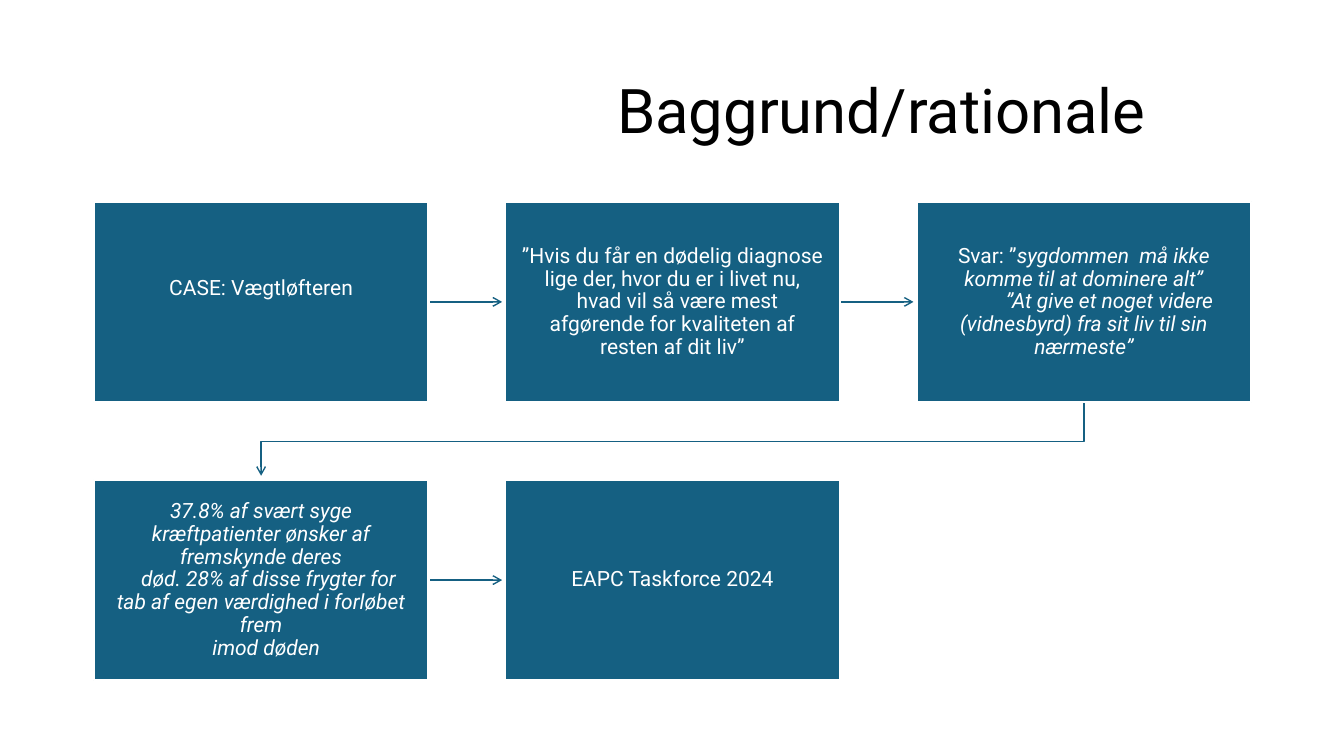
from lxml import etree
from pptx import Presentation
from pptx.dml.color import RGBColor
from pptx.enum import shapes, text
from pptx.oxml import ns
from pptx.util import Inches, Pt

BLUE = RGBColor(0x15, 0x60, 0x82)
WHITE = RGBColor(0xFF, 0xFF, 0xFF)
BLACK = RGBColor(0x00, 0x00, 0x00)
FONT = "Roboto"

LEFT, TOP = 0.93, 2.0
BOX_WIDTH, BOX_HEIGHT = 3.32, 1.99
COLUMN_STEP, ROW_STEP = 4.08, 2.76
ARROW_LENGTH = 0.73

CASE = [(0, [("CASE: Vægtløfteren", False)])]
QUESTION = [
    (0, [("”Hvis du får en dødelig diagnose lige der, hvor du er i livet nu,", False)]),
    (0.1, [("hvad vil så være mest afgørende for kvaliteten af resten af dit liv”", False)]),
]
ANSWER = [
    (0, [("Svar: ”", False), ("sygdommen  må ikke komme til at dominere alt”", True)]),
    (0.51, [("”At give et noget videre (vidnesbyrd) fra sit liv til sin nærmeste”", True)]),
]
STATISTICS = [
    (0, [("37.8% af svært syge kræftpatienter ønsker af fremskynde deres", True)]),
    (0.15, [("død. 28% af disse frygter for tab af egen værdighed i forløbet frem", True)]),
    (0.1, [("imod døden", True)]),
]
TASKFORCE = [(0, [("EAPC Taskforce 2024", False)])]

STEPS = [
    (0, 0, CASE, 0.43),
    (1, 0, QUESTION, 0.17),
    (2, 0, ANSWER, 0.17),
    (0, 1, STATISTICS, 0.17),
    (1, 1, TASKFORCE, 0.17),
]


def corner(column, row):
    """Return the left and top of a grid cell in inches."""
    return LEFT + column * COLUMN_STEP, TOP + row * ROW_STEP


def style_span(span, size, color, italic=False):
    """Set the font of one run."""
    span.font.name = FONT
    span.font.size = Pt(size)
    span.font.color.rgb = color
    span.font.italic = italic


def add_title(page, wording):
    """Add the slide title."""
    box = page.shapes.add_textbox(Inches(0.92), Inches(0.4), Inches(11.5), Inches(1.45))
    frame = box.text_frame
    frame.word_wrap = True
    frame.vertical_anchor = text.MSO_ANCHOR.MIDDLE
    frame.margin_left = Inches(5.2)
    frame.text = wording
    paragraph = frame.paragraphs[0]
    paragraph.line_spacing = 0.9
    style_span(paragraph.runs[0], 44, BLACK)


def add_step(page, column, row, paragraphs, bottom_margin):
    """Add one filled step box with its text."""
    left, top = corner(column, row)
    box = page.shapes.add_shape(
        shapes.MSO_SHAPE.RECTANGLE,
        Inches(left), Inches(top), Inches(BOX_WIDTH), Inches(BOX_HEIGHT),
    )
    box.shadow.inherit = False
    box.fill.solid()
    box.fill.fore_color.rgb = BLUE
    box.line.color.rgb = WHITE
    box.line.width = Pt(1.5)
    frame = box.text_frame
    frame.word_wrap = True
    frame.vertical_anchor = text.MSO_ANCHOR.MIDDLE
    frame.margin_left = frame.margin_right = Inches(0.16)
    frame.margin_top = Inches(0.17)
    frame.margin_bottom = Inches(bottom_margin)
    for index, (indent, spans) in enumerate(paragraphs):
        paragraph = frame.add_paragraph() if index else frame.paragraphs[0]
        paragraph.alignment = text.PP_ALIGN.CENTER
        paragraph.line_spacing = 0.9
        properties = paragraph._p.get_or_add_pPr()
        properties.set("marL", "0")
        properties.set("indent", str(Inches(indent)))
        for wording, italic in spans:
            span = paragraph.add_run()
            span.text = wording
            style_span(span, 15, WHITE, italic)


def style_arrow(arrow):
    """Give a line its colour, width and arrowhead."""
    arrow.line.color.rgb = BLUE
    arrow.line.width = Pt(1)
    outline = arrow.line._get_or_add_ln()
    etree.SubElement(outline, ns.qn("a:tailEnd"), type="arrow")


def add_straight_arrow(page, column, row):
    """Add the arrow from a box to its right neighbour."""
    left, top = corner(column, row)
    start, middle = left + BOX_WIDTH, top + BOX_HEIGHT / 2
    arrow = page.shapes.add_connector(
        shapes.MSO_CONNECTOR.STRAIGHT,
        Inches(start), Inches(middle), Inches(start + ARROW_LENGTH), Inches(middle),
    )
    style_arrow(arrow)
    etree.SubElement(arrow._element.spPr, ns.qn("a:effectLst"))


def add_return_arrow(page):
    """Add the bent arrow from the end of row one to the start of row two."""
    right, top = corner(2, 0)
    start_x, end_x = right + BOX_WIDTH / 2, LEFT + BOX_WIDTH / 2
    start_y = top + BOX_HEIGHT
    bend_y, end_y = start_y + 0.39, start_y + ARROW_LENGTH
    builder = page.shapes.build_freeform(Inches(start_x), Inches(start_y))
    corners = [(start_x, bend_y), (end_x, bend_y), (end_x, end_y)]
    builder.add_line_segments([(Inches(x), Inches(y)) for x, y in corners], close=False)
    arrow = builder.convert_to_shape()
    arrow.fill.background()
    arrow.shadow.inherit = False
    style_arrow(arrow)


def main():
    """Build and save the slide."""
    deck = Presentation()
    deck.slide_width, deck.slide_height = Inches(13.33), Inches(7.5)
    page = deck.slides.add_slide(deck.slide_layouts[6])
    add_title(page, "Baggrund/rationale")
    for column, row in [(0, 0), (1, 0), (0, 1)]:
        add_straight_arrow(page, column, row)
    add_return_arrow(page)
    for step in STEPS:
        add_step(page, *step)
    deck.save("out.pptx")


if __name__ == "__main__":
    main()
